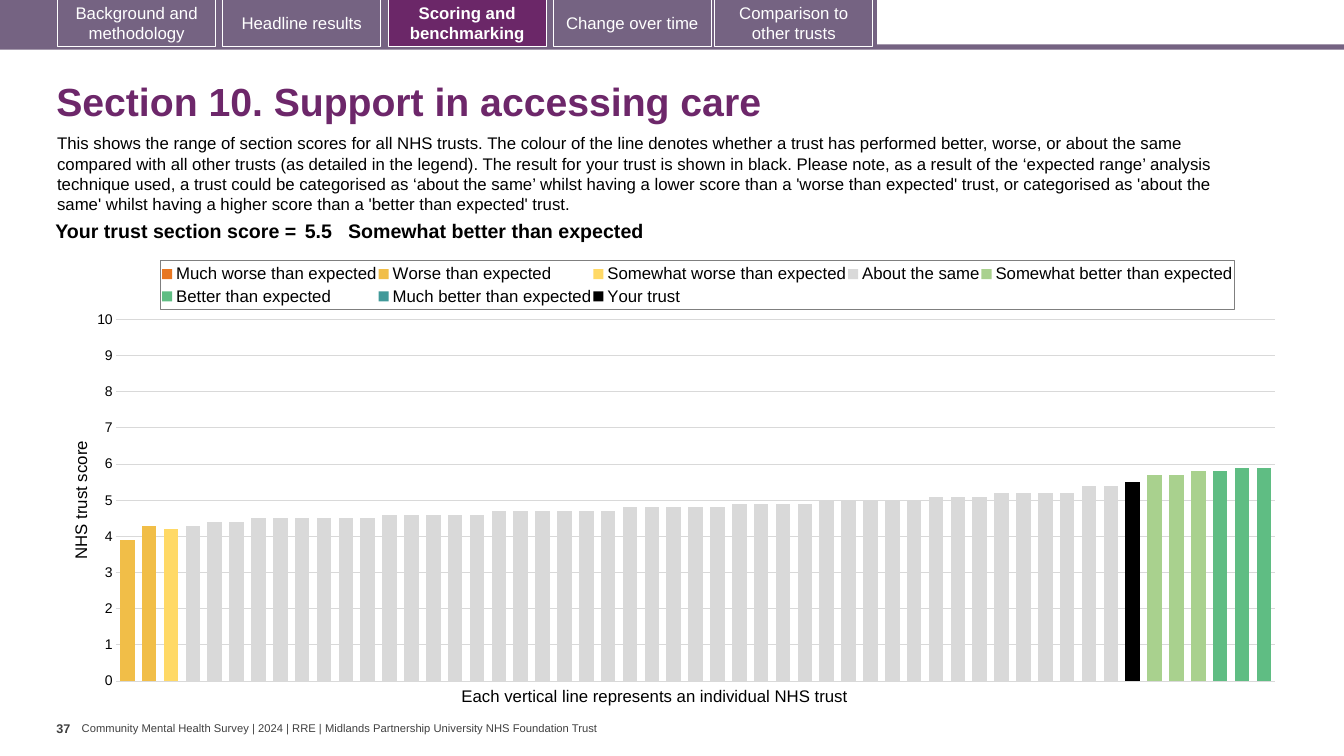
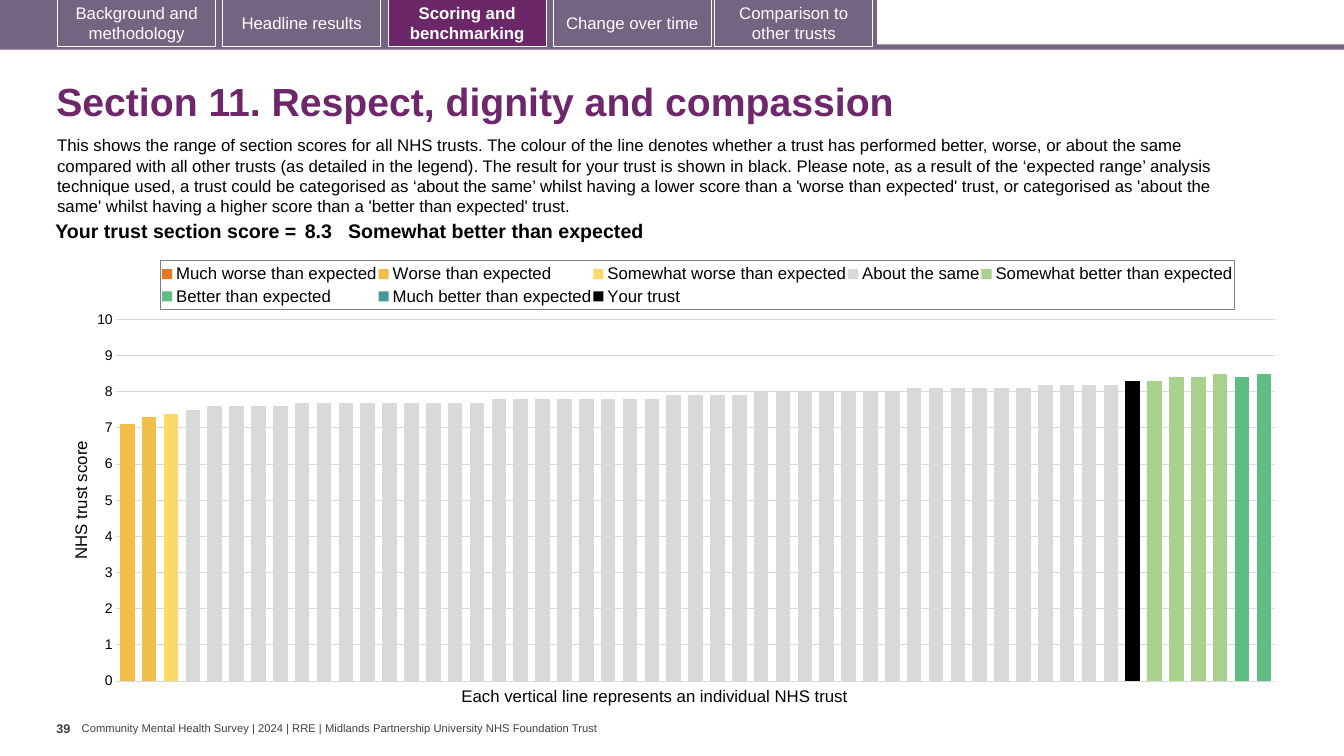
from copy import deepcopy
from itertools import chain, repeat

from pptx import Presentation
from pptx.chart.data import CategoryChartData
from pptx.dml.color import RGBColor
from pptx.enum.chart import XL_CHART_TYPE as ChartType
from pptx.enum.chart import XL_LEGEND_POSITION as LegendPos
from pptx.enum.chart import XL_TICK_MARK as TickMark
from pptx.enum.shapes import MSO_SHAPE as Shape
from pptx.enum.text import MSO_ANCHOR as Anchor
from pptx.enum.text import PP_ALIGN as Align
from pptx.oxml import parse_xml
from pptx.oxml.ns import nsdecls, qn
from pptx.util import Cm, Pt

SLIDE_W, SLIDE_H = 33.87, 19.05
FONT = "Arial"
BLACK, WHITE, GREY = "000000", "FFFFFF", "404040"
BAND, ACTIVE, TITLE = "756382", "6B2768", "6D276A"
GRID, LEGEND_LINE = "D9D9D9", "7F7F7F"

TABS = [
    (1.45, "Background and methodology"),
    (5.61, "Headline results"),
    (9.78, "Scoring and benchmarking"),
    (13.94, "Change over time"),
    (18.01, "Comparison to other trusts"),
]
ACTIVE_TAB = "Scoring and benchmarking"
FOOTER = ("Community Mental Health Survey | 2024 | RRE | "
          "Midlands Partnership University NHS Foundation Trust")
INTRO = (
    "This shows the range of section scores for all NHS trusts. The colour of the line "
    "denotes whether a trust has performed better, worse, or about the same compared with "
    "all other trusts (as detailed in the legend). The result for your trust is shown in "
    "black. Please note, as a result of the ‘expected range’ analysis technique used, a "
    "trust could be categorised as ‘about the same’ whilst having a lower score than a "
    "'worse than expected' trust, or categorised as 'about the same' whilst having a higher "
    "score than a 'better than expected' trust."
)
SERIES = {
    "Much worse than expected": "E87722",
    "Worse than expected": "F1BE48",
    "Somewhat worse than expected": "FFD966",
    "About the same": "D9D9D9",
    "Somewhat better than expected": "A9D18E",
    "Better than expected": "5FBD83",
    "Much better than expected": "419999",
    "Your trust": BLACK,
}


def steps(*pairs):
    """Expand (score, count) pairs into a list of scores."""
    return list(chain.from_iterable(repeat(v, n) for v, n in pairs))


SECTIONS = [
    dict(
        title="Section 10. Support in accessing care", page="37", intro_top=3.23,
        score=5.5, verdict="Somewhat better than expected",
        bands={
            "Worse than expected": [3.9, 4.3],
            "Somewhat worse than expected": [4.2],
            "About the same": steps(
                (4.3, 1), (4.4, 2), (4.5, 6), (4.6, 5), (4.7, 6), (4.8, 5),
                (4.9, 4), (5, 5), (5.1, 3), (5.2, 4), (5.4, 2)),
            "Somewhat better than expected": [5.5, 5.7, 5.7, 5.8],
            "Better than expected": [5.8, 5.9, 5.9],
        },
    ),
    dict(
        title="Section 11. Respect, dignity and compassion", page="39", intro_top=3.28,
        score=8.3, verdict="Somewhat better than expected",
        bands={
            "Worse than expected": [7.1, 7.3],
            "Somewhat worse than expected": [7.4],
            "About the same": steps(
                (7.5, 1), (7.6, 4), (7.7, 9), (7.8, 8), (7.9, 4), (8, 7),
                (8.1, 6), (8.2, 4)),
            "Somewhat better than expected": [8.3, 8.3, 8.4, 8.4, 8.5],
            "Better than expected": [8.4, 8.5],
        },
    ),
]


def rgb(hex_color):
    return RGBColor.from_string(hex_color)


def style(font, size=12, color=BLACK, bold=False, name=FONT):
    font.name, font.size, font.bold = name, Pt(size), bold
    font.color.rgb = rgb(color)


def write(tf, text, align=Align.LEFT, anchor=Anchor.TOP, insets=None, spacing=None, **fmt):
    """Put one formatted paragraph in a text frame; insets are (horizontal, vertical) cm."""
    tf.word_wrap = True
    tf.vertical_anchor = anchor
    if insets:
        tf.margin_left = tf.margin_right = Cm(insets[0])
        tf.margin_top = tf.margin_bottom = Cm(insets[1])
    p = tf.paragraphs[0]
    p.alignment = align
    if spacing:
        p.line_spacing = spacing
    r = p.add_run()
    r.text = text
    style(r.font, **fmt)


def add_text(s, x, y, w, h, text, **fmt):
    write(s.shapes.add_textbox(Cm(x), Cm(y), Cm(w), Cm(h)).text_frame, text, **fmt)


def add_rect(s, x, y, w, h, fill, line=None):
    sp = s.shapes.add_shape(Shape.RECTANGLE, Cm(x), Cm(y), Cm(w), Cm(h))
    sp.shadow.inherit = False
    sp.fill.solid()
    sp.fill.fore_color.rgb = rgb(fill)
    if line:
        sp.line.color.rgb = rgb(line)
        sp.line.width = Pt(0.75)
    else:
        sp.line.fill.background()
    return sp


def add_tab_bar(s, x, y, w):
    add_rect(s, x, y + 1.12, w, 0.13, BAND)
    add_rect(s, x, y, 22.1, 1.19, BAND)
    for left, label in TABS:
        active = label == ACTIVE_TAB
        tab = add_rect(s, x + left, y - 0.02, 3.99, 1.19, ACTIVE if active else BAND, WHITE)
        write(tab.text_frame, label, align=Align.CENTER, anchor=Anchor.MIDDLE,
              color=WHITE, bold=active)


def add_footer(s, x, y, page):
    add_text(s, x, y, 0.64, 1.02, page, insets=(0, 0.13), size=9, color=GREY, bold=True)
    add_text(s, x + 0.64, y + 0.16, 14, 0.33, FOOTER, insets=(0, 0),
             anchor=Anchor.MIDDLE, size=8, color=GREY)


def add_score_line(s, x, y, w, h, score, verdict):
    widths = [6.69, 1.19]
    widths.append(w - sum(widths))
    table = s.shapes.add_table(1, 3, Cm(x), Cm(y), Cm(w), Cm(h)).table
    table.first_row = table.horz_banding = False
    texts = ["Your trust section score =", str(score), verdict]
    for i, (width, text) in enumerate(zip(widths, texts)):
        table.columns[i].width = Cm(width)
        cell = table.cell(0, i)
        cell.fill.background()
        cell.margin_left = cell.margin_right = Cm(0 if i == 2 else 0.1)
        cell.margin_top = cell.margin_bottom = Cm(0.1)
        p = cell.text_frame.paragraphs[0]
        p.alignment = Align.RIGHT if i == 0 else Align.LEFT
        r = p.add_run()
        r.text = text
        style(r.font, size=14, bold=True)


def chart_data(bands, score):
    """Lay the bands end to end; your trust opens the somewhat better band."""
    count = sum(map(len, bands.values()))
    data = CategoryChartData()
    data.categories = [str(i + 1) for i in range(count)]
    start = 0
    for name in SERIES:
        values = [None] * count
        band = bands.get(name, [])
        if name == "Somewhat better than expected":
            trust_at = start
        values[start:start + len(band)] = band
        start += len(band)
        if name == "Your trust":
            values[trust_at] = score
        data.add_series(name, values)
    return data


def layout_xml(x, y, w, h, inner=False):
    target = '<c:layoutTarget val="inner"/>' if inner else ""
    return parse_xml(
        f'<c:layout {nsdecls("c")}><c:manualLayout>{target}'
        '<c:xMode val="edge"/><c:yMode val="edge"/>'
        f'<c:x val="{x}"/><c:y val="{y}"/><c:w val="{w}"/><c:h val="{h}"/>'
        '</c:manualLayout></c:layout>')


def move_last_series_to_right_axis(plot_area):
    left = plot_area.find(qn("c:barChart"))
    right = deepcopy(left)
    left.remove(left.findall(qn("c:ser"))[-1])
    for ser in right.findall(qn("c:ser"))[:-1]:
        right.remove(ser)
    cat_id, val_id = "5001", "5002"
    for ax, ax_id in zip(right.findall(qn("c:axId")), (cat_id, val_id)):
        ax.set("val", ax_id)
    left.addnext(right)
    plot_area.append(parse_xml(
        f'<c:valAx {nsdecls("c", "a")}><c:axId val="{val_id}"/>'
        '<c:scaling><c:orientation val="minMax"/><c:max val="10"/><c:min val="0"/></c:scaling>'
        '<c:delete val="0"/><c:axPos val="r"/><c:majorTickMark val="out"/>'
        '<c:minorTickMark val="none"/><c:tickLblPos val="none"/>'
        '<c:spPr><a:ln><a:noFill/></a:ln></c:spPr>'
        f'<c:crossAx val="{cat_id}"/><c:crosses val="max"/></c:valAx>'))
    plot_area.append(parse_xml(
        f'<c:catAx {nsdecls("c")}><c:axId val="{cat_id}"/>'
        '<c:scaling><c:orientation val="minMax"/></c:scaling><c:delete val="1"/>'
        f'<c:axPos val="b"/><c:crossAx val="{val_id}"/><c:crosses val="autoZero"/></c:catAx>'))


def format_value_axis(axis):
    axis.minimum_scale, axis.maximum_scale, axis.major_unit = 0, 10, 1
    axis.major_tick_mark = TickMark.NONE
    axis.format.line.fill.background()
    axis.major_gridlines.format.line.color.rgb = rgb(GRID)
    axis.major_gridlines.format.line.width = Pt(0.75)
    style(axis.tick_labels.font, size=10)
    tf = axis.axis_title.text_frame
    tf.text = "NHS trust score"
    style(tf.paragraphs[0].runs[0].font)
    body = tf._txBody.find(qn("a:bodyPr"))
    body.set("rot", "-5400000")
    body.set("vert", "horz")


def format_legend(chart):
    chart.has_legend = True
    legend = chart.legend
    legend.position = LegendPos.TOP
    legend.include_in_layout = False
    style(legend.font)
    el = legend._element
    el.find(qn("c:legendPos")).addnext(layout_xml(0.076, 0.027, 0.877, 0.109))
    el.find(qn("c:txPr")).addprevious(parse_xml(
        f'<c:spPr {nsdecls("c", "a")}><a:ln w="9525"><a:solidFill>'
        f'<a:srgbClr val="{LEGEND_LINE}"/></a:solidFill></a:ln></c:spPr>'))


def add_score_chart(s, x, y, w, h, bands, score):
    chart = s.shapes.add_chart(ChartType.COLUMN_CLUSTERED, Cm(x), Cm(y), Cm(w), Cm(h),
                               chart_data(bands, score)).chart
    chart.has_title = False
    style(chart.font, size=10, name="Calibri")
    plot = chart.plots[0]
    plot.gap_width, plot.overlap, plot.vary_by_categories = 50, 100, False
    for ser, color in zip(plot.series, SERIES.values()):
        ser.format.fill.solid()
        ser.format.fill.fore_color.rgb = rgb(color)
    chart.category_axis.visible = False
    format_value_axis(chart.value_axis)
    format_legend(chart)
    plot_area = chart._chartSpace.chart.plotArea
    for old in plot_area.findall(qn("c:layout")):
        plot_area.remove(old)
    plot_area.insert(0, layout_xml(0.04, 0.158, 0.946, 0.808, inner=True))
    move_last_series_to_right_axis(plot_area)


def add_section_slide(prs, title, page, intro_top, score, verdict, bands):
    s = prs.slides.add_slide(prs.slide_layouts[6])
    add_tab_bar(s, 0, 0, SLIDE_W)
    add_text(s, 1.17, 1.7, 31.72, 1.83, title, anchor=Anchor.MIDDLE, spacing=0.9,
             size=28, color=TITLE, bold=True)
    add_text(s, 1.19, intro_top, 30.5, 2.31, INTRO)
    add_score_chart(s, 1.7, 6.27, 30.86, 11.28, bands, score)
    add_text(s, 11.38, 17.15, 10.44, 0.76,
             "Each vertical line represents an individual NHS trust")
    add_score_line(s, 0.89, 5.46, 29.72, 0.79, score, verdict)
    add_footer(s, 1.42, 18.03, page)


def main():
    prs = Presentation()
    prs.slide_width, prs.slide_height = Cm(SLIDE_W), Cm(SLIDE_H)
    for section in SECTIONS:
        add_section_slide(prs, **section)
    prs.save("out.pptx")


if __name__ == "__main__":
    main()
